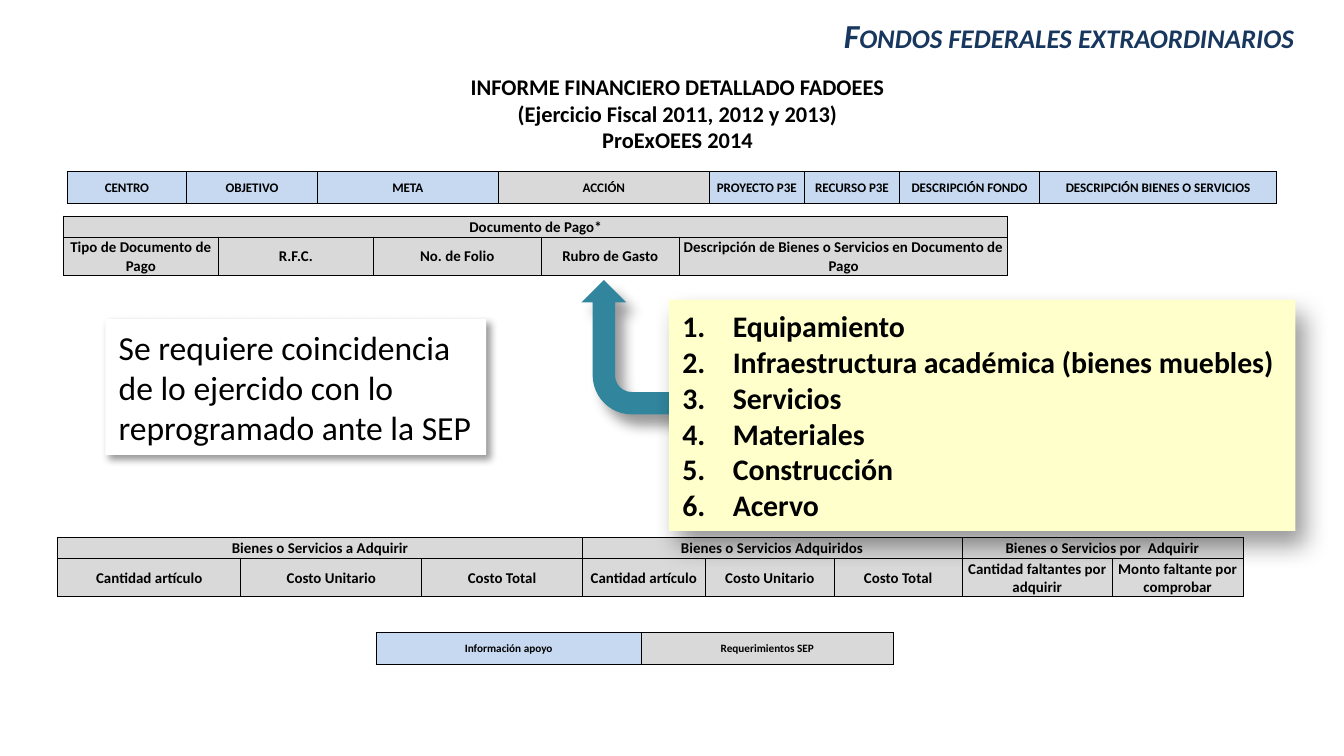
import dataclasses
import lxml.etree
import pptx
import pptx.dml.color
import pptx.enum.shapes
import pptx.enum.text
import pptx.oxml.ns
import pptx.util

Pt = pptx.util.Pt
ALIGN = pptx.enum.text.PP_ALIGN
ANCHOR = pptx.enum.text.MSO_ANCHOR
SHAPE = pptx.enum.shapes.MSO_SHAPE


@dataclasses.dataclass(frozen=True)
class Theme:
    font: str = "Calibri"
    black: str = "000000"
    navy: str = "17375E"
    teal: str = "31859C"
    yellow: str = "FFFFCC"
    white: str = "FFFFFF"
    support: str = "C6D9F1"
    required: str = "D9D9D9"
    legend_size: float = 6
    header_size: float = 7
    column_size: float = 8
    report_size: float = 12
    list_size: float = 16
    large_size: float = 18
    border: float = 0.5


def color(value):
    return pptx.dml.color.RGBColor.from_string(value)


def child(parent, tag, **attributes):
    values = {name: str(value) for name, value in attributes.items()}
    return lxml.etree.SubElement(parent, pptx.oxml.ns.qn(tag), values)


class SlideBuilder:
    def __init__(self, slide, theme):
        self.slide = slide
        self.theme = theme

    def style(self, paragraph, size, align, ink=None, bold=True, italic=None):
        paragraph.alignment = align
        font = paragraph.font
        font.name = self.theme.font
        font.size = Pt(size)
        font.bold = bold
        font.italic = italic
        font.color.rgb = color(ink or self.theme.black)

    def text(self, box, content, size, align, ink=None, bold=True, italic=None,
             wrap=True, numbered=False, small_caps=False):
        frame = box.text_frame
        frame.word_wrap = wrap
        frame.text = content
        for paragraph in frame.paragraphs:
            if numbered:
                properties = paragraph._p.get_or_add_pPr()
                properties.set("marL", str(Pt(27)))
                properties.set("indent", str(Pt(-27)))
                child(properties, "a:buFont", typeface="+mj-lt")
                child(properties, "a:buAutoNum", type="arabicPeriod")
            self.style(paragraph, size, align, ink, bold, italic)
            if small_caps:
                paragraph.font._element.set("cap", "small")

    def text_box(self, left, top, width, height, content, size, align, **options):
        box = self.slide.shapes.add_textbox(Pt(left), Pt(top), Pt(width), Pt(height))
        self.text(box, content, size, align, **options)

    def shape(self, kind, left, top, width, height, fill, blur, distance, angle):
        shape = self.slide.shapes.add_shape(kind, Pt(left), Pt(top), Pt(width), Pt(height))
        shape.fill.solid()
        shape.fill.fore_color.rgb = color(fill)
        shape.line.fill.background()
        shape.shadow.inherit = False
        effects = shape._element.spPr.find(pptx.oxml.ns.qn("a:effectLst"))
        shadow = child(effects, "a:outerShdw", blurRad=Pt(blur), dist=Pt(distance),
                       dir=angle * 60000, algn="tl", rotWithShape=0)
        shadow_color = child(shadow, "a:srgbClr", val=self.theme.black)
        child(shadow_color, "a:alpha", val=40000)
        return shape

    def cell(self, cell, content, size, fill):
        cell.text = content
        cell.vertical_anchor = ANCHOR.MIDDLE
        cell.margin_left = cell.margin_right = cell.margin_top = Pt(0.7)
        cell.margin_bottom = Pt(0)
        self.style(cell.text_frame.paragraphs[0], size, ALIGN.CENTER)
        self.borders(cell)
        cell.fill.solid()
        cell.fill.fore_color.rgb = color(fill)

    def borders(self, cell):
        properties = cell._tc.get_or_add_tcPr()
        for side in ("a:lnL", "a:lnR", "a:lnT", "a:lnB"):
            line = child(properties, side, w=Pt(self.theme.border))
            child(child(line, "a:solidFill"), "a:srgbClr", val=self.theme.black)

    def table(self, left, top, widths, heights, rows, size, fills):
        frame = self.slide.shapes.add_table(
            len(heights), len(widths), Pt(left), Pt(top), Pt(sum(widths)), Pt(sum(heights)))
        table = frame.table
        table.first_row = table.horz_banding = False
        for column, width in zip(table.columns, widths):
            column.width = Pt(width)
        for row, height in zip(table.rows, heights):
            row.height = Pt(height)
        for row_index, row in enumerate(rows):
            column_index = 0
            for content, span in row:
                last = column_index + span - 1
                cell = table.cell(row_index, column_index)
                if span > 1:
                    cell.merge(table.cell(row_index, last))
                self.cell(cell, content, size, fills[column_index])
                for merged in range(column_index + 1, last + 1):
                    self.borders(table.cell(row_index, merged))
                column_index = last + 1


def single(*labels):
    return [(label, 1) for label in labels]


def main():
    theme = Theme()
    presentation = pptx.Presentation()
    presentation.slide_width = Pt(720)
    presentation.slide_height = Pt(405)
    slide = presentation.slides.add_slide(presentation.slide_layouts[6])
    builder = SlideBuilder(slide, theme)
    one_row = [16.8]
    two_rows = [11.3, 19]

    builder.table(
        36, 92, [64, 70, 97, 113, 51, 51, 75, 127], one_row,
        [single("CENTRO", "OBJETIVO", "META", "ACCIÓN", "PROYECTO P3E", "RECURSO P3E",
                "DESCRIPCIÓN FONDO", "DESCRIPCIÓN BIENES O SERVICIOS")],
        theme.header_size, [theme.support] * 3 + [theme.required] + [theme.support] * 4)
    builder.table(
        34, 115.7, [83, 83, 90, 74, 176], two_rows,
        [[("Documento de Pago*", 5)],
         single("Tipo de Documento de Pago", "R.F.C.", "No. de Folio", "Rubro de Gasto",
                "Descripción de Bienes o Servicios en Documento de Pago")],
        theme.column_size, [theme.required] * 5)
    amounts = ("Cantidad artículo", "Costo Unitario", "Costo Total")
    builder.table(
        31, 288, [98, 97, 86, 66, 69, 68.5, 80.5, 70], two_rows,
        [[("Bienes o Servicios a Adquirir", 3), ("Bienes o Servicios Adquiridos", 3),
          ("Bienes o Servicios por  Adquirir", 2)],
         single(*amounts, *amounts, "Cantidad faltantes por adquirir",
                "Monto faltante por comprobar")],
        theme.column_size, [theme.required] * 8)
    builder.table(
        201.5, 339, [142, 135], one_row,
        [single("Información apoyo", "Requerimientos SEP")],
        theme.legend_size, [theme.support, theme.required])

    builder.text_box(
        183, 35.5, 360, 51,
        "INFORME FINANCIERO DETALLADO FADOEES\v(Ejercicio Fiscal 2011, 2012 y 2013)\n"
        "ProExOEES 2014", theme.report_size, ALIGN.CENTER)

    arrow = builder.shape(SHAPE.BENT_ARROW, 299.5, 162, 72, 48, theme.teal, 7, 8, 50)
    arrow.rotation = 270

    categories = builder.shape(
        SHAPE.RECTANGLE, 358.5, 160.5, 335.5, 124, theme.yellow, 13, 9, 60)
    builder.text(
        categories,
        "Equipamiento\nInfraestructura académica (bienes muebles)\nServicios\n"
        "Materiales\nConstrucción\nAcervo",
        theme.list_size, ALIGN.LEFT, wrap=False, numbered=True)

    notice = builder.shape(SHAPE.RECTANGLE, 56.5, 171, 204, 72.7, theme.white, 4, 3, 45)
    builder.text(
        notice, "Se requiere coincidencia de lo ejercido con lo reprogramado ante la SEP",
        theme.large_size, ALIGN.LEFT, bold=False)

    builder.text_box(
        445, 4.5, 262, 29, "Fondos federales extraordinarios", theme.large_size,
        ALIGN.JUSTIFY, ink=theme.navy, italic=True, wrap=False, small_caps=True)

    presentation.save("out.pptx")


if __name__ == "__main__":
    main()
